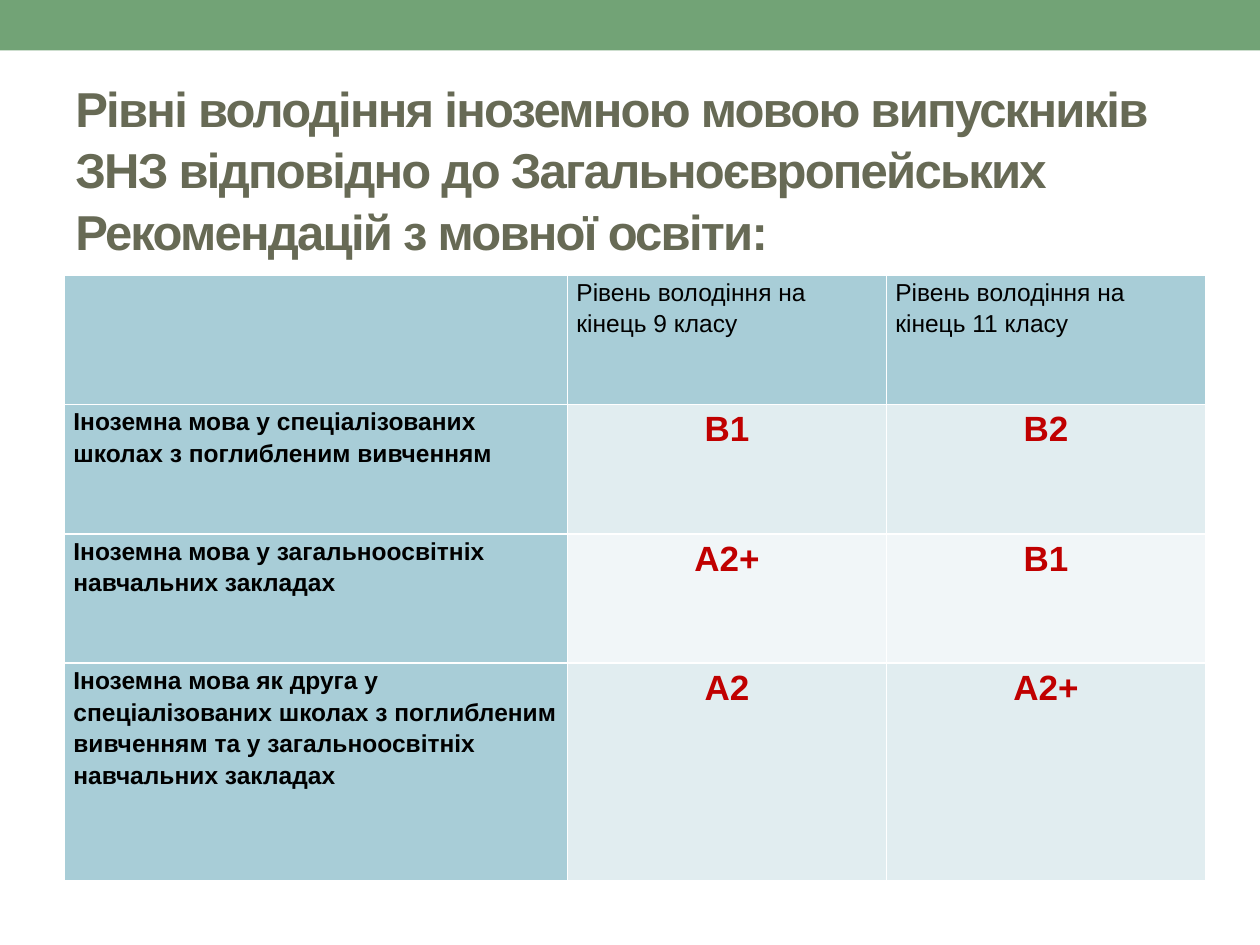
"""Build a slide with a table of foreign language levels for school leavers."""
from lxml import etree
from pptx import Presentation
from pptx.dml.color import RGBColor
from pptx.enum.shapes import MSO_SHAPE
from pptx.enum.text import MSO_ANCHOR, PP_ALIGN
from pptx.oxml.ns import qn
from pptx.util import Cm, Pt

RECT = MSO_SHAPE.RECTANGLE
MIDDLE, TOP = MSO_ANCHOR.MIDDLE, MSO_ANCHOR.TOP
LEFT, CENTER = PP_ALIGN.LEFT, PP_ALIGN.CENTER
HEAD_FILL, BAND_FILLS = "A8CDD7", ("E1EDF0", "F1F6F8")
ROWS = [
    ("", "Рівень володіння на кінець 9 класу", "Рівень володіння на кінець 11 класу"),
    ("Іноземна мова у спеціалізованих школах з поглибленим вивченням", "В1", "В2"),
    ("Іноземна мова у загальноосвітніх навчальних закладах", "А2+", "В1"),
    ("Іноземна мова як друга у спеціалізованих школах з поглибленим вивченням "
     "та у загальноосвітніх навчальних закладах", "А2", "А2+"),
]
COL_WIDTHS = (10.14, 6.43, 6.43)
ROW_HEIGHTS = (2.61, 2.61, 2.61, 4.39)
HEADER = {"size": Pt(14), "bold": False, "color": "000000", "align": LEFT}
LABEL = {**HEADER, "bold": True}
LEVEL = {"size": Pt(20), "bold": True, "color": "C00000", "align": CENTER}
TITLE = {"size": Pt(28), "bold": True, "color": "676A55", "align": LEFT}
CELL = {"margin_left": Cm(0.18), "margin_right": Cm(0.18), "margin_top": 0,
        "margin_bottom": 0, "vertical_anchor": TOP}


def rgb(value):
    return RGBColor.from_string(value)


def write(tf, text, style, spacing):
    p = tf.paragraphs[0]
    p.alignment, p.line_spacing = style["align"], spacing
    r = p.add_run()
    r.text = text
    r.font.name = "Arial"
    r.font.color.rgb = rgb(style["color"])
    for name in ("size", "bold"):
        setattr(r.font, name, style[name])
    return r


prs = Presentation()
prs.slide_width, prs.slide_height = Cm(25.4), Cm(19.05)
s = prs.slides.add_slide(prs.slide_layouts[6])

sp = s.shapes.add_shape(RECT, 0, 0, prs.slide_width, Cm(1.02))
sp.shadow.inherit = False
sp.fill.solid()
sp.fill.fore_color.rgb = rgb("72A376")
sp.line.fill.background()

tf = s.shapes.add_textbox(Cm(1.27), Cm(1.47), Cm(22.86), Cm(3.84)).text_frame
tf.word_wrap = True
tf.vertical_anchor = MIDDLE
r = write(tf, "Рівні володіння іноземною мовою випускників ЗНЗ відповідно до "
          "Загальноєвропейських Рекомендацій з мовної освіти:", TITLE, 1.04)
r.font._element.set("spc", "-100")

table = s.shapes.add_table(len(ROWS), len(COL_WIDTHS), Cm(1.3), Cm(5.54),
                           Cm(sum(COL_WIDTHS)), Cm(sum(ROW_HEIGHTS))).table
for col, width in zip(table.columns, COL_WIDTHS):
    col.width = Cm(width)
for row, height in zip(table.rows, ROW_HEIGHTS):
    row.height = Cm(height)

for i, texts in enumerate(ROWS):
    for j, text in enumerate(texts):
        cell = table.cell(i, j)
        for name, value in CELL.items():
            setattr(cell, name, value)
        style = HEADER if i == 0 else LABEL if j == 0 else LEVEL
        if text:
            write(cell.text_frame, text, style, 1.15)
        tcPr = cell._tc.get_or_add_tcPr()
        for side in ("lnL", "lnR", "lnT", "lnB"):
            ln = etree.SubElement(tcPr, qn(f"a:{side}"), w=str(Pt(1)))
            fill = etree.SubElement(ln, qn("a:solidFill"))
            etree.SubElement(fill, qn("a:srgbClr"), val="FFFFFF")
        cell.fill.solid()
        cell.fill.fore_color.rgb = rgb(HEAD_FILL if i == 0 or j == 0 else BAND_FILLS[(i - 1) % 2])

prs.save("out.pptx")
